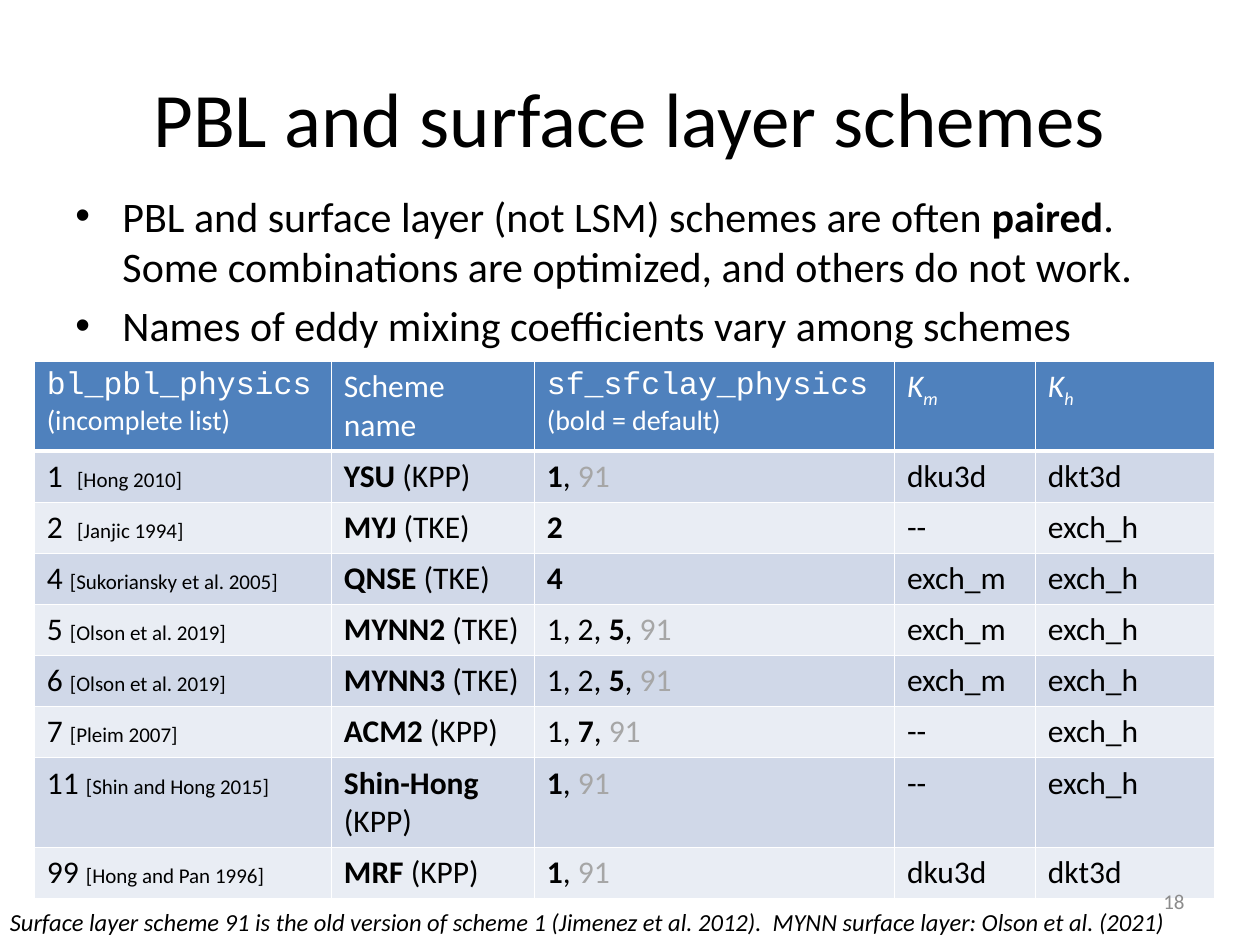
from dataclasses import dataclass, field

from lxml import etree
from pptx import Presentation
from pptx.dml.color import RGBColor
from pptx.enum.text import MSO_ANCHOR, MSO_AUTO_SIZE, PP_ALIGN
from pptx.oxml.ns import qn
from pptx.util import Cm, Pt

TOP, MIDDLE = MSO_ANCHOR.TOP, MSO_ANCHOR.MIDDLE
LEFT, CENTER, RIGHT = PP_ALIGN.LEFT, PP_ALIGN.CENTER, PP_ALIGN.RIGHT
FIT_SHAPE, NO_FIT = MSO_AUTO_SIZE.SHAPE_TO_FIT_TEXT, MSO_AUTO_SIZE.NONE

BLACK = RGBColor(0x00, 0x00, 0x00)
WHITE = RGBColor(0xFF, 0xFF, 0xFF)
OLD_GREY = RGBColor(0xA6, 0xA6, 0xA6)
NUMBER_GREY = RGBColor(0x8C, 0x8C, 0x8C)
HEADER_BLUE = RGBColor(0x4F, 0x81, 0xBD)
BANDS = (RGBColor(0xD0, 0xD8, 0xE8), RGBColor(0xE9, 0xED, 0xF4))

BODY_FONT, CODE_FONT = "Calibri", "Courier New"
OLD_SCHEME = "91"
COLUMN_WIDTHS = (5.99, 4.09, 7.26, 2.84, 3.61)
ROW_HEIGHT = 1.03


@dataclass
class Span:
    text: str
    format: dict = field(default_factory=dict)
    color: RGBColor = BLACK
    baseline: int = 0


@dataclass
class Label:
    left: float
    top: float
    width: float
    height: float
    paras: list[list[Span]]
    align: PP_ALIGN = LEFT
    anchor: MSO_ANCHOR = TOP
    wrap: bool = True
    bulleted: bool = False


@dataclass
class Scheme:
    number: str
    citation: str
    name: str
    closure: str
    surface_layers: str
    default_layer: str
    momentum: str
    heat: str


SCHEMES = [
    Scheme("1  ", "Hong 2010", "YSU", "KPP", "1, 91", "1", "dku3d", "dkt3d"),
    Scheme("2  ", "Janjic 1994", "MYJ", "TKE", "2", "2", "--", "exch_h"),
    Scheme("4 ", "Sukoriansky et al. 2005", "QNSE", "TKE", "4", "4", "exch_m", "exch_h"),
    Scheme("5 ", "Olson et al. 2019", "MYNN2", "TKE", "1, 2, 5, 91", "5", "exch_m", "exch_h"),
    Scheme("6 ", "Olson et al. 2019", "MYNN3", "TKE", "1, 2, 5, 91", "5", "exch_m", "exch_h"),
    Scheme("7 ", "Pleim 2007", "ACM2", "KPP", "1, 7, 91", "7", "--", "exch_h"),
    Scheme("11 ", "Shin and Hong 2015", "Shin-Hong", "KPP", "1, 91", "1", "--", "exch_h"),
    Scheme("99 ", "Hong and Pan 1996", "MRF", "KPP", "1, 91", "1", "dku3d", "dkt3d"),
]


def white(text: str, baseline: int = 0, **format) -> Span:
    return Span(text, format, WHITE, baseline)


HEADER = [
    [[white("bl_pbl_physics ", name=CODE_FONT), white("(incomplete list)", size=Pt(16))]],
    [[white("Scheme name")]],
    [[white("sf_sfclay_physics", name=CODE_FONT)], [white("(bold = default)", size=Pt(16))]],
    *([[white("K", italic=True), white(index, -25000, italic=True)]] for index in "mh"),
]

BIG = {"size": Pt(44)}
BODY = {"size": Pt(24)}
TITLE = Label(1.27, 0.76, 22.86, 3.18, [[Span("PBL and surface layer schemes", BIG)]],
              CENTER, MIDDLE)
POINTS = Label(1.27, 3.71, 22.86, 12.57, [
    [Span("PBL and surface layer (not LSM) schemes are often ", BODY),
     Span("paired", BODY | {"bold": True}),
     Span(".  Some combinations are optimized, and others do not work.", BODY)],
    [Span("Names of eddy mixing coefficients vary among schemes", BODY)],
], bulleted=True)
PAGE_NUMBER = Label(18.21, 17.65, 5.92, 1.02, [[Span("18", {"size": Pt(12)}, NUMBER_GREY)]],
                    RIGHT, MIDDLE)
FOOTNOTE = Label(-0.05, 18.16, 23.83, 0.86, [[Span(
    "Surface layer scheme 91 is the old version of scheme 1 (Jimenez et al. 2012).  "
    "MYNN surface layer: Olson et al. (2021)", {"size": Pt(14), "italic": True})]], wrap=False)


def scheme_cells(scheme: Scheme) -> list[list[list[Span]]]:
    """Return the paragraphs of each cell in the scheme's row."""
    layers = []
    for layer in scheme.surface_layers.split(", "):
        if layers:
            layers.append(Span(", "))
        color = OLD_GREY if layer == OLD_SCHEME else BLACK
        layers.append(Span(layer, {"bold": layer == scheme.default_layer}, color))
    spans = [
        [Span(scheme.number), Span(f"[{scheme.citation}]", {"size": Pt(12)})],
        [Span(scheme.name, {"bold": True}), Span(f" ({scheme.closure})")],
        layers,
        [Span(scheme.momentum)],
        [Span(scheme.heat)],
    ]
    return [[para] for para in spans]


def write_paras(frame, paras: list[list[Span]], align: PP_ALIGN = LEFT) -> None:
    defaults = {"name": BODY_FONT, "size": Pt(18), "bold": False, "italic": False}
    for index, spans in enumerate(paras):
        para = frame.paragraphs[0] if index == 0 else frame.add_paragraph()
        para.alignment = align
        for span in spans:
            run = para.add_run()
            run.text = span.text
            for name, value in (defaults | span.format).items():
                setattr(run.font, name, value)
            run.font.color.rgb = span.color
            if span.baseline:
                run._r.get_or_add_rPr().set("baseline", str(span.baseline))


def add_bullet(para) -> None:
    para.space_before = Pt(4.8)
    properties = para._p.get_or_add_pPr()
    properties.set("marL", str(Cm(0.95)))
    properties.set("indent", str(Cm(-0.95)))
    etree.SubElement(properties, qn("a:buFont"), typeface="Arial")
    etree.SubElement(properties, qn("a:buChar"), char="•")


def draw_label(page, label: Label) -> None:
    box = page.shapes.add_textbox(Cm(label.left), Cm(label.top), Cm(label.width), Cm(label.height))
    frame = box.text_frame
    settings = {"word_wrap": label.wrap, "vertical_anchor": label.anchor,
                "auto_size": NO_FIT if label.wrap else FIT_SHAPE}
    for name, value in settings.items():
        setattr(frame, name, value)
    write_paras(frame, label.paras, label.align)
    if label.bulleted:
        for para in frame.paragraphs:
            add_bullet(para)


def add_borders(cell, bottom: float, top: float) -> None:
    """Give the cell white borders; side lines are one point wide."""
    properties = cell._tc.get_or_add_tcPr()
    for side, width in (("L", 1), ("R", 1), ("T", top), ("B", bottom)):
        line = etree.SubElement(properties, qn(f"a:ln{side}"), w=str(Pt(width)))
        fill = etree.SubElement(line, qn("a:solidFill"))
        etree.SubElement(fill, qn("a:srgbClr"), val=str(WHITE))


def draw_scheme_table(page) -> None:
    rows = [HEADER, *map(scheme_cells, SCHEMES)]
    table = page.shapes.add_table(
        len(rows), len(COLUMN_WIDTHS), Cm(0.69), Cm(7.29),
        Cm(sum(COLUMN_WIDTHS)), Cm(ROW_HEIGHT * len(rows))).table
    for column, width in zip(table.columns, COLUMN_WIDTHS):
        column.width = Cm(width)
    for row_index, cells in enumerate(rows):
        table.rows[row_index].height = Cm(ROW_HEIGHT)
        for column_index, paras in enumerate(cells):
            cell = table.cell(row_index, column_index)
            add_borders(cell, 3 if row_index == 0 else 1, 3 if row_index == 1 else 1)
            cell.fill.solid()
            cell.fill.fore_color.rgb = BANDS[(row_index - 1) % 2] if row_index else HEADER_BLUE
            write_paras(cell.text_frame, paras)


def main() -> None:
    deck = Presentation()
    deck.slide_width, deck.slide_height = Cm(25.4), Cm(19.05)
    page = deck.slides.add_slide(deck.slide_layouts[6])
    draw_label(page, TITLE)
    draw_label(page, POINTS)
    draw_scheme_table(page)
    draw_label(page, PAGE_NUMBER)
    draw_label(page, FOOTNOTE)
    deck.save("out.pptx")


if __name__ == "__main__":
    main()
